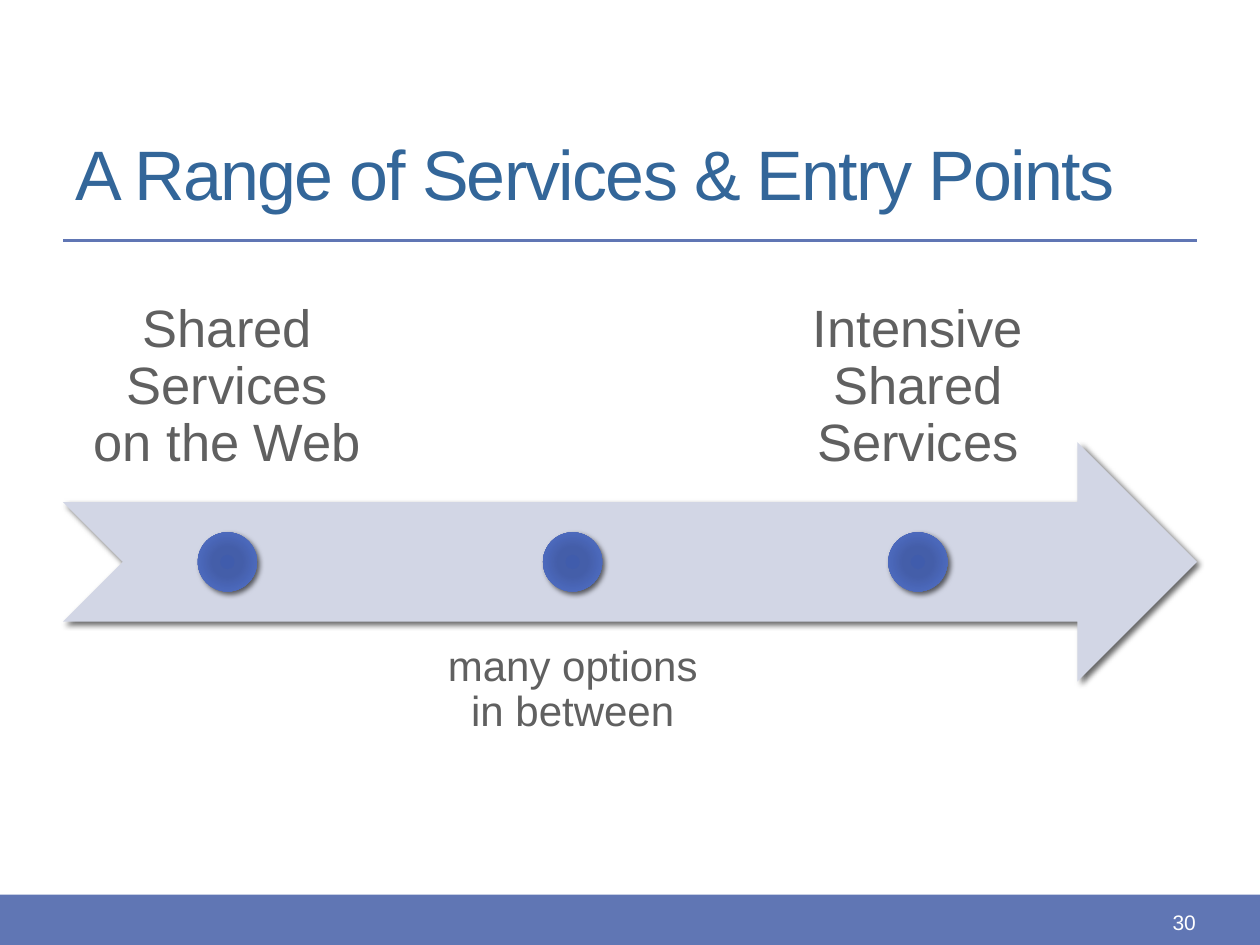
from dataclasses import dataclass

from lxml.etree import SubElement
from pptx import Presentation
from pptx.dml.color import RGBColor
from pptx.enum.shapes import MSO_CONNECTOR, MSO_SHAPE
from pptx.enum.text import MSO_ANCHOR as Anchor, MSO_AUTO_SIZE, PP_ALIGN as Align
from pptx.oxml import parse_xml
from pptx.oxml.ns import nsdecls, qn
from pptx.util import Inches, Pt

COLORS = {
    "accent": "6076B4", "title": "336699", "text": "606060",
    "arrow": "D2D6E5", "white": "FFFFFF", "shadow": "000000",
}
DOT_STOPS = {0: "405CAC", 34: "445EA9", 70: "4C69BC", 100: "6076B4"}

WIDTH, HEIGHT = 10, 7.5
MARGIN = WIDTH * 0.05
CONTENT = WIDTH - 2 * MARGIN
RULE_Y = 1.91
FOOTER_H = 0.4
ARROW_Y, ARROW_H = 3.51, 1.9
STEP, LABEL_W = 2.74, 2.61
DOT = 0.47


@dataclass(frozen=True)
class Stage:
    label: str
    size: int
    above: bool


STAGES = [
    Stage("Shared Services on the Web", 30, True),
    Stage("many options in between", 24, False),
    Stage("Intensive Shared Services", 30, True),
]


def rgb(name: str) -> RGBColor:
    return RGBColor.from_string(COLORS[name])


def write(shape, text: str, *, size: float, color: str, align=Align.LEFT,
          anchor=Anchor.TOP, inset: float | None = None,
          spacing: float | None = None):
    tf = shape.text_frame
    tf.word_wrap = True
    tf.auto_size = MSO_AUTO_SIZE.NONE
    tf.vertical_anchor = anchor
    if inset is not None:
        tf.margin_left = tf.margin_right = Inches(inset)
        tf.margin_top = tf.margin_bottom = Inches(inset)
    p = tf.paragraphs[0]
    p.alignment = align
    if spacing:
        p.line_spacing = spacing
    r = p.add_run()
    r.text = text
    r.font.name, r.font.size = "Arial", Pt(size)
    r.font.color.rgb = rgb(color)
    return r


def add_box(s, x: float, y: float, w: float, h: float):
    return s.shapes.add_textbox(Inches(x), Inches(y), Inches(w), Inches(h))


def add_shape(s, kind, x: float, y: float, w: float, h: float, fill: str):
    sp = s.shapes.add_shape(kind, Inches(x), Inches(y), Inches(w), Inches(h))
    sp.shadow.inherit = False
    sp.fill.solid()
    sp.fill.fore_color.rgb = rgb(fill)
    sp.line.fill.background()
    return sp


def cast_shadow(sp) -> None:
    effects = sp._element.spPr.find(qn("a:effectLst"))
    effects.append(parse_xml(
        f'<a:outerShdw {nsdecls("a")} blurRad="{Pt(3)}" dist="{Pt(2)}" '
        f'dir="2700000" rotWithShape="0"><a:srgbClr val="{COLORS["shadow"]}">'
        '<a:alpha val="60000"/></a:srgbClr></a:outerShdw>'))


def fill_radial(sp, stops: dict[int, str]) -> None:
    gs = "".join(f'<a:gs pos="{pos * 1000}"><a:srgbClr val="{color}"/></a:gs>'
                 for pos, color in stops.items())
    spPr = sp._element.spPr
    spPr.replace(spPr.find(qn("a:solidFill")), parse_xml(
        f'<a:gradFill {nsdecls("a")} rotWithShape="1"><a:gsLst>{gs}</a:gsLst>'
        '<a:path path="circle"><a:fillToRect l="100000" t="100000" '
        'r="100000" b="100000"/></a:path></a:gradFill>'))


def add_rule(s, y: float) -> None:
    line = s.shapes.add_connector(MSO_CONNECTOR.STRAIGHT, Inches(MARGIN), Inches(y),
                                  Inches(MARGIN + CONTENT), Inches(y))
    line.line.color.rgb = rgb("accent")
    line.line.width = Pt(2.08)
    SubElement(line._element.spPr, qn("a:effectLst"))


def add_title(s, text: str) -> None:
    title = s.shapes.title
    title.left, title.top = Inches(MARGIN), Inches(RULE_Y - 1.08)
    title.width, title.height = Inches(CONTENT), Inches(1.08)
    r = write(title, text, size=40, color="title", anchor=Anchor.MIDDLE)
    r.font._element.set("spc", "-100")


def add_stage(s, column: int, stage: Stage) -> None:
    x = MARGIN + column * STEP
    y = 2.08 if stage.above else 4.93
    write(add_box(s, x, y, LABEL_W, ARROW_H), stage.label,
          size=stage.size, color="text", align=Align.CENTER,
          anchor=Anchor.BOTTOM if stage.above else Anchor.TOP,
          inset=0.23 if stage.above else 0.19, spacing=0.9)
    dot = add_shape(s, MSO_SHAPE.OVAL, x + (LABEL_W - DOT) / 2,
                    ARROW_Y + (ARROW_H - DOT) / 2, DOT, DOT, "accent")
    fill_radial(dot, DOT_STOPS)
    cast_shadow(dot)


def main() -> None:
    prs = Presentation()
    prs.slide_width, prs.slide_height = Inches(WIDTH), Inches(HEIGHT)
    s = prs.slides.add_slide(prs.slide_layouts.get_by_name("Title Only"))

    add_shape(s, MSO_SHAPE.RECTANGLE, 0, HEIGHT - FOOTER_H, WIDTH, FOOTER_H, "accent")
    add_rule(s, RULE_Y)
    add_title(s, "A Range of Services & Entry Points")

    arrow = add_shape(s, MSO_SHAPE.NOTCHED_RIGHT_ARROW, MARGIN, ARROW_Y,
                      CONTENT, ARROW_H, "arrow")
    cast_shadow(arrow)
    for column, stage in enumerate(STAGES):
        add_stage(s, column, stage)

    write(add_box(s, 8.42, 7.14, 1.17, 0.36), "30", size=12, color="white",
          align=Align.RIGHT, anchor=Anchor.MIDDLE)
    prs.save("out.pptx")


if __name__ == "__main__":
    main()
